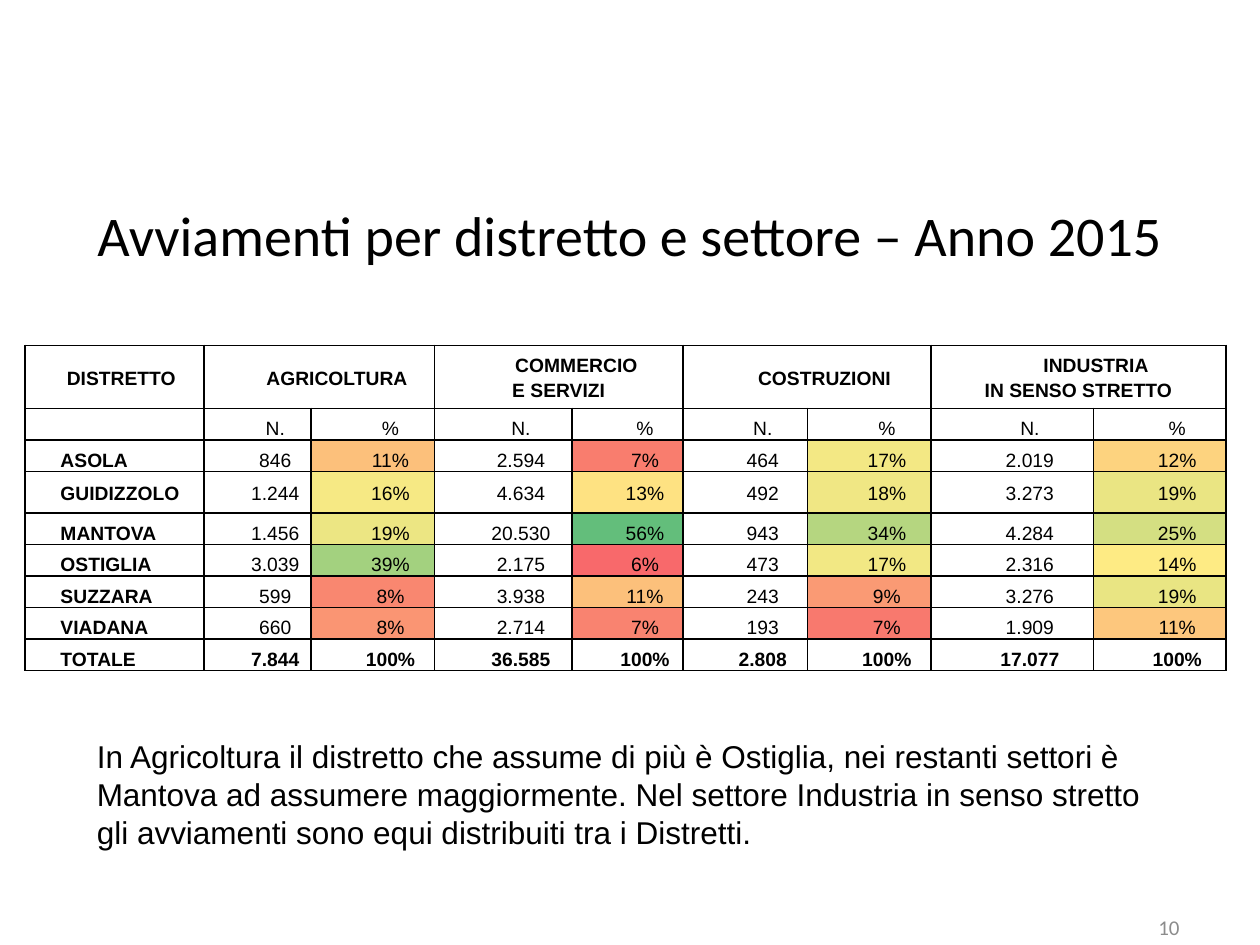
import pptx
import pptx.dml.color
import pptx.enum.text
import pptx.oxml.ns
import pptx.util
from lxml import etree

Inches = pptx.util.Inches
Pt = pptx.util.Pt
ALIGN = pptx.enum.text.PP_ALIGN
ANCHOR = pptx.enum.text.MSO_ANCHOR
qn = pptx.oxml.ns.qn

COLUMN_WIDTHS = [1.42, 0.85, 0.98, 1.09, 0.88, 0.99, 0.98, 1.29, 1.05]
ROW_HEIGHTS = [0.5, 0.25, 0.25, 0.33] + [0.25] * 5
SECTORS = ["AGRICOLTURA", "COMMERCIO\vE SERVIZI", "COSTRUZIONI",
           "INDUSTRIA\vIN SENSO STRETTO"]

# District, then number and percentage for each sector
DISTRICTS = [
    ["ASOLA", "846", "11%", "2.594", "7%", "464", "17%", "2.019", "12%"],
    ["GUIDIZZOLO", "1.244", "16%", "4.634", "13%", "492", "18%", "3.273", "19%"],
    ["MANTOVA", "1.456", "19%", "20.530", "56%", "943", "34%", "4.284", "25%"],
    ["OSTIGLIA", "3.039", "39%", "2.175", "6%", "473", "17%", "2.316", "14%"],
    ["SUZZARA", "599", "8%", "3.938", "11%", "243", "9%", "3.276", "19%"],
    ["VIADANA", "660", "8%", "2.714", "7%", "193", "7%", "1.909", "11%"],
]
TOTALS = ["TOTALE", "7.844", "100%", "36.585", "100%", "2.808", "100%",
          "17.077", "100%"]

# Heat colours of the percentages: one row per district, one column per sector
HEAT = [
    ["FCC07B", "F97D6E", "F3E884", "FDD37F"],
    ["F6E984", "FEE282", "F0E784", "EAE583"],
    ["ECE683", "63BE7B", "B5D680", "D4DF82"],
    ["A3D17F", "F8696B", "F2E884", "FEEB84"],
    ["F98770", "FCC07B", "FA9A74", "E9E583"],
    ["FA9573", "F98370", "F8796E", "FDC77D"],
]


def color(value):
    return pptx.dml.color.RGBColor.from_string(value)


class SlideBuilder:
    TITLE_FONT = "Calibri"
    BODY_FONT = "Arial"
    BLACK = "000000"
    WHITE = "FFFFFF"
    GREY = "8C8C8C"

    def __init__(self, presentation):
        self.slide = presentation.slides.add_slide(presentation.slide_layouts[5])

    def format(self, paragraph, size, font, fill=BLACK, bold=False, align=ALIGN.LEFT):
        paragraph.alignment = align
        paragraph.font.size = Pt(size)
        paragraph.font.name = font
        paragraph.font.bold = bold
        paragraph.font.color.rgb = color(fill)

    def title(self, text, left, top, width, height):
        shape = self.slide.shapes.title
        shape.left, shape.top = Inches(left), Inches(top)
        shape.width, shape.height = Inches(width), Inches(height)
        frame = shape.text_frame
        frame.text = text
        frame.vertical_anchor = ANCHOR.MIDDLE
        self.format(frame.paragraphs[0], 32, self.TITLE_FONT, align=ALIGN.CENTER)

    def text(self, text, left, top, width, height, anchor=ANCHOR.TOP, **style):
        shape = self.slide.shapes.add_textbox(
            Inches(left), Inches(top), Inches(width), Inches(height))
        frame = shape.text_frame
        frame.word_wrap = True
        frame.vertical_anchor = anchor
        frame.text = text
        self.format(frame.paragraphs[0], **style)

    def table(self, left, top, column_widths, row_heights):
        table = self.slide.shapes.add_table(
            len(row_heights), len(column_widths), Inches(left), Inches(top),
            Inches(sum(column_widths)), Inches(sum(row_heights))).table
        table.first_row = table.horz_banding = False
        for column, width in zip(table.columns, column_widths):
            column.width = Inches(width)
        for row, height in zip(table.rows, row_heights):
            row.height = Inches(height)
        return table

    def borders(self, cell):
        properties = cell._tc.get_or_add_tcPr()
        for side in ("a:lnL", "a:lnR", "a:lnT", "a:lnB"):
            line = etree.SubElement(properties, qn(side), w=str(Pt(1)))
            fill = etree.SubElement(line, qn("a:solidFill"))
            etree.SubElement(fill, qn("a:srgbClr"), val=self.BLACK)

    def cell(self, cell, text, fill=WHITE, bold=False, align=ALIGN.CENTER,
             anchor=ANCHOR.BOTTOM, inset=0.05):
        self.borders(cell)
        cell.fill.solid()
        cell.fill.fore_color.rgb = color(fill)
        cell.vertical_anchor = anchor
        cell.margin_left = cell.margin_right = Inches(inset)
        cell.margin_top = cell.margin_bottom = 0
        cell.text = text
        paragraph = cell.text_frame.paragraphs[0]
        paragraph.line_spacing = 1.15
        properties = paragraph._p.get_or_add_pPr()
        properties.set("marL", "0")
        properties.set("indent", str(Inches(0.28)))
        self.format(paragraph, 11, self.BODY_FONT, bold=bold, align=align)
        if not text:  # an empty cell must not stretch its row
            paragraph._p.get_or_add_endParaRPr().set("sz", "1100")


def main():
    presentation = pptx.Presentation()
    presentation.slide_width = Inches(10)
    presentation.slide_height = Inches(7.5)
    builder = SlideBuilder(presentation)

    # Title and slide number
    builder.title("Avviamenti per distretto e settore – Anno 2015", 0.5, 1.23, 9, 1.26)
    builder.text("10", 8.23, 7.21, 1.23, 0.29, anchor=ANCHOR.MIDDLE, size=12,
                 font=builder.TITLE_FONT, fill=builder.GREY, align=ALIGN.RIGHT)

    # Table header: each sector spans its number and percentage columns
    table = builder.table(0.2, 2.74, COLUMN_WIDTHS, ROW_HEIGHTS)
    header = ["DISTRETTO"]
    for sector in SECTORS:
        header += [sector, ""]
    for column, text in enumerate(header):
        builder.cell(table.cell(0, column), text, bold=True, anchor=ANCHOR.MIDDLE,
                     align=ALIGN.CENTER if column else ALIGN.LEFT)
    for column in range(1, len(header), 2):
        table.cell(0, column).merge(table.cell(0, column + 1))
    for column, text in enumerate([""] + ["N.", "%"] * len(SECTORS)):
        builder.cell(table.cell(1, column), text)

    # Table body: heat colours on the percentages, bold names and totals
    for index, values in enumerate(DISTRICTS + [TOTALS]):
        is_total = values is TOTALS
        anchor = ANCHOR.MIDDLE if values[0] == "GUIDIZZOLO" else ANCHOR.BOTTOM
        for column, text in enumerate(values):
            is_name = column == 0
            is_heat = not is_total and not is_name and column % 2 == 0
            builder.cell(
                table.cell(index + 2, column), text, anchor=anchor,
                fill=HEAT[index][column // 2 - 1] if is_heat else builder.WHITE,
                bold=is_name or is_total,
                align=ALIGN.LEFT if is_name else ALIGN.CENTER,
                inset=0 if is_name else 0.05)

    # Comment
    builder.text(
        "In Agricoltura il distretto che assume di più è Ostiglia, nei restanti "
        "settori è Mantova ad assumere maggiormente. Nel settore Industria in senso "
        "stretto gli avviamenti sono equi distribuiti tra i Distretti.",
        0.67, 5.8, 8.74, 1.01, size=18, font=builder.BODY_FONT)

    presentation.save("out.pptx")


if __name__ == "__main__":
    main()
